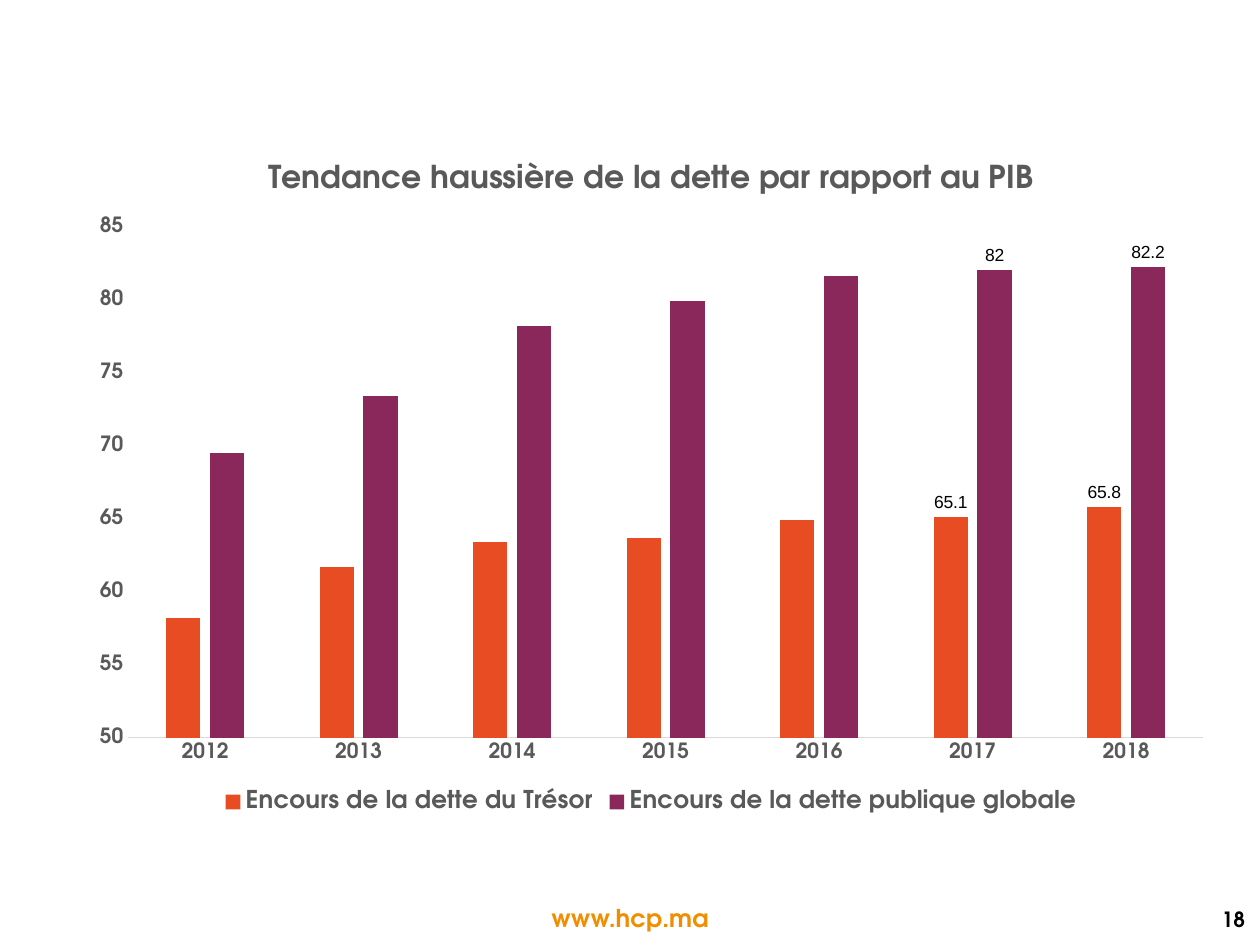
"""Build the slide on the rising debt-to-GDP ratio."""
from dataclasses import dataclass

from pptx import Presentation
from pptx.chart.data import CategoryChartData
from pptx.dml.color import RGBColor
from pptx.enum import chart as ch, text
from pptx.util import Inches, Pt

FONT = "TeX Gyre Adventor"
GREY = "595959"
YEARS = [str(year) for year in range(2012, 2019)]
LABELLED_YEARS = ("2017", "2018")


@dataclass
class Debt:
    """One debt series in percent of GDP."""
    name: str
    color: str
    values: tuple


@dataclass
class Footer:
    """One line of footer text."""
    text: str
    box: tuple
    size: int
    color: str
    align: text.PP_ALIGN
    anchor: text.MSO_ANCHOR


DEBTS = [
    Debt("Encours de la dette du Trésor", "E84C22",
         (58.2, 61.7, 63.4, 63.7, 64.9, 65.1, 65.8)),
    Debt("Encours de la dette publique globale", "8A285B",
         (69.5, 73.4, 78.2, 79.9, 81.6, 82, 82.2)),
]
FOOTERS = [
    Footer("www.hcp.ma", (3.82, 7.12, 2.36, 0.33), 14, "F18E00",
           text.PP_ALIGN.CENTER, text.MSO_ANCHOR.TOP),
    Footer("18", (8.46, 7.12, 1.52, 0.35), 12, "000000",
           text.PP_ALIGN.RIGHT, text.MSO_ANCHOR.MIDDLE),
]


def rgb(color: str) -> RGBColor:
    """Turn a hex string into a colour."""
    return RGBColor.from_string(color)


def style(font, size: int, color: str, bold: bool = True, name: str = FONT) -> None:
    """Set the face, size and colour of a font."""
    font.name, font.size, font.bold = name, Pt(size), bold
    font.color.rgb = rgb(color)


def add_footer(s, footer: Footer) -> None:
    """Add one footer text box."""
    tf = s.shapes.add_textbox(*map(Inches, footer.box)).text_frame
    tf.word_wrap = True
    tf.vertical_anchor = footer.anchor
    p = tf.paragraphs[0]
    p.text, p.alignment = footer.text, footer.align
    style(p.font, footer.size, footer.color)


def format_axis(axis) -> None:
    """Apply the look shared by both axes."""
    axis.major_tick_mark = axis.minor_tick_mark = ch.XL_TICK_MARK.NONE
    axis.has_major_gridlines = False
    style(axis.tick_labels.font, 12, GREY)


def format_series(series, debt: Debt) -> None:
    """Colour a series and label its latest years."""
    series.format.fill.solid()
    series.format.fill.fore_color.rgb = rgb(debt.color)
    series.invert_if_negative = False
    series.data_labels.show_value = False
    for year in LABELLED_YEARS:
        label = series.points[YEARS.index(year)].data_label
        label.position = ch.XL_LABEL_POSITION.OUTSIDE_END
        style(label.font, 10, "000000", False, "Arial")


def add_debt_chart(s) -> None:
    """Add the clustered column chart."""
    data = CategoryChartData()
    data.categories = YEARS
    for debt in DEBTS:
        data.add_series(debt.name, debt.values)
    chart = s.shapes.add_chart(
        ch.XL_CHART_TYPE.COLUMN_CLUSTERED,
        *map(Inches, (0.61, 1.07, 9.12, 5.43)), data).chart
    style(chart.font, 10, "000000", False)

    chart.has_title = True
    p = chart.chart_title.text_frame.paragraphs[0]
    p.text = "Tendance haussière de la dette par rapport au PIB"
    style(p.font, 18, GREY)
    chart.chart_title.include_in_layout = False

    chart.has_legend = True
    chart.legend.position = ch.XL_LEGEND_POSITION.BOTTOM
    chart.legend.include_in_layout = False
    style(chart.legend.font, 14, GREY)

    format_axis(chart.category_axis)
    line = chart.category_axis.format.line
    line.width = Pt(0.75)
    line.color.rgb = rgb("D9D9D9")
    format_axis(chart.value_axis)
    chart.value_axis.format.line.fill.background()
    chart.value_axis.minimum_scale = 50
    chart.value_axis.maximum_scale = 85
    chart.value_axis.major_unit = 5

    plot = chart.plots[0]
    plot.gap_width, plot.overlap = 219, -27
    plot.vary_by_categories = False
    for series, debt in zip(plot.series, DEBTS):
        format_series(series, debt)


def main() -> None:
    """Build and save the presentation."""
    prs = Presentation()
    prs.slide_width, prs.slide_height = Inches(10), Inches(7.5)
    s = prs.slides.add_slide(prs.slide_layouts[6])
    for footer in FOOTERS:
        add_footer(s, footer)
    add_debt_chart(s)
    prs.save("out.pptx")


if __name__ == "__main__":
    main()
